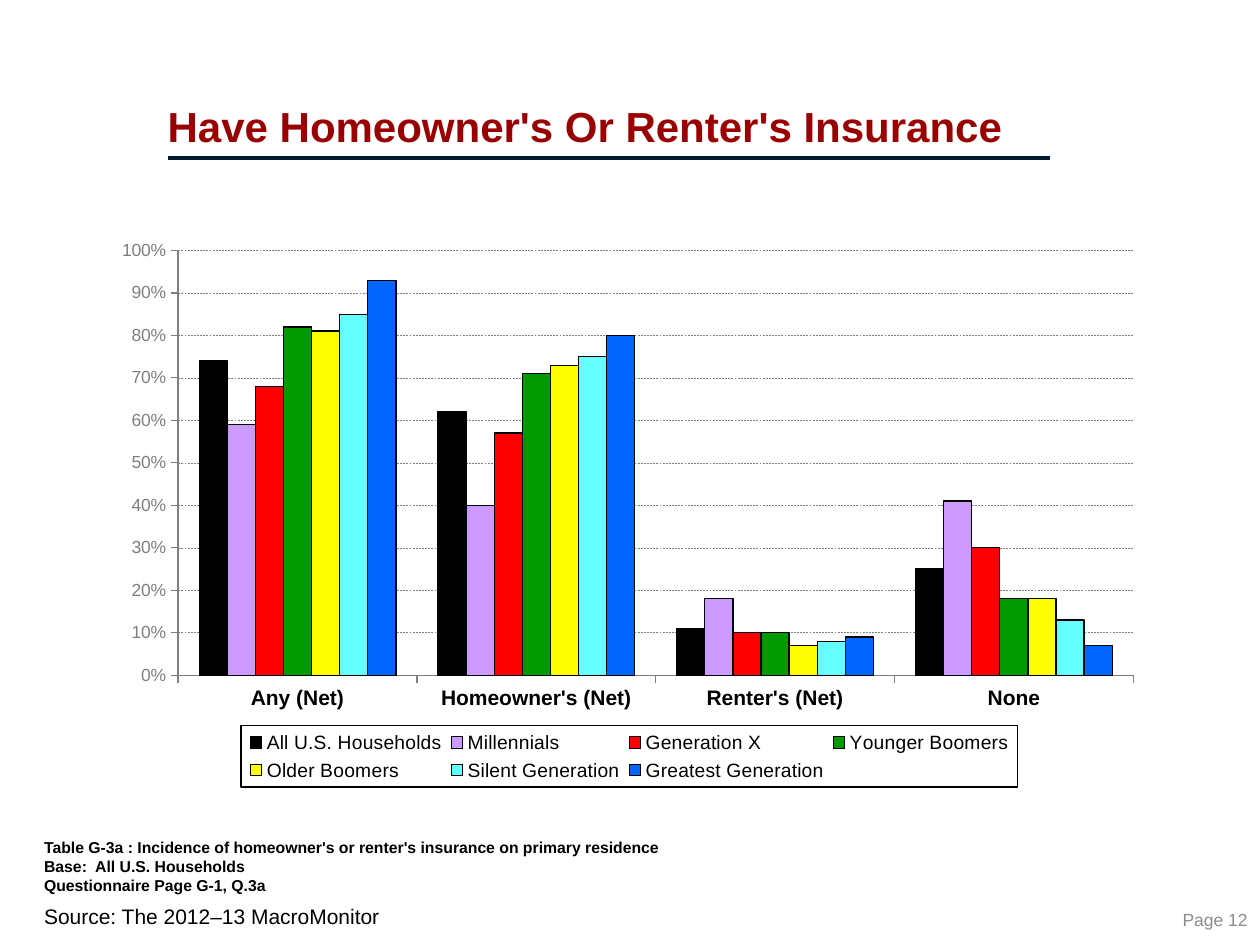
"""Build the slide on homeowner's and renter's insurance by generation."""
from lxml.etree import SubElement
from pptx import Presentation
from pptx.chart.data import CategoryChartData as Data
from pptx.dml.color import RGBColor
from pptx.enum.chart import XL_CHART_TYPE as Kind, XL_LEGEND_POSITION as Spot, XL_TICK_MARK as Tick
from pptx.enum.dml import MSO_LINE_DASH_STYLE as Dash
from pptx.enum.shapes import MSO_CONNECTOR as Link
from pptx.enum.text import MSO_ANCHOR as Anchor, PP_ALIGN as Align
from pptx.oxml import parse_xml
from pptx.oxml.ns import nsdecls, qn
from pptx.util import Cm, Pt


def style(font, size, hue, bold=False):
    font.name, font.size, font.bold = "Arial", Pt(size), bold
    font.color.rgb = RGBColor.from_string(hue)


def place(node, index, frame):
    for old in node.findall(qn("c:layout")):
        node.remove(old)
    box = parse_xml(f"<c:layout {nsdecls('c')}><c:manualLayout/></c:layout>")
    node.insert(index, box)
    if index == 0:
        SubElement(box[0], qn("c:layoutTarget")).set("val", "inner")
    for tag in ("xMode", "yMode"):
        SubElement(box[0], qn(f"c:{tag}")).set("val", "edge")
    for tag, part in zip("xywh", frame):
        SubElement(box[0], qn(f"c:{tag}")).set("val", str(part))


deck = Presentation()
deck.slide_width, deck.slide_height = Cm(25.4), Cm(19.05)
slide = deck.slides.add_slide(deck.slide_layouts[6])
shapes = slide.shapes

notes = ("Table G-3a : Incidence of homeowner's or renter's insurance on primary residence\v"
         "Base:  All U.S. Households\vQuestionnaire Page G-1, Q.3a")
texts = [
    ("Source: The 2012–13 MacroMonitor", (0.64, 18.08, 21.8, 0.76), (0.25, 0.13), 12, "000000", False, Anchor.TOP, Align.LEFT, True),
    ("Have Homeowner's Or Renter's Insurance", (3.38, 0.2, 18.2, 2.97), (0, 0.13), 24, "990000", True, Anchor.BOTTOM, Align.LEFT, True),
    ("Page 12", (23.52, 18.19, 1.88, 0.69), (0.25, 0.13), 10, "8C8C8C", False, Anchor.MIDDLE, Align.RIGHT, False),
    (notes, (0, 16.31, 17.83, 2.06), (0.89, 0.33), 9, "000000", True, Anchor.BOTTOM, Align.LEFT, False),
]
for words, area, inset, size, hue, bold, anchor, align, wrap in texts:
    frame = shapes.add_textbox(*map(Cm, area)).text_frame
    frame.text = words
    frame.word_wrap, frame.vertical_anchor = wrap, anchor
    frame.margin_left = frame.margin_right = Cm(inset[0])
    frame.margin_top = frame.margin_bottom = Cm(inset[1])
    para = frame.paragraphs[0]
    para.alignment = align
    if size == 24:
        para.line_spacing = 0.8
    for run in para.runs:
        style(run.font, size, hue, bold)

rule = shapes.add_connector(Link.STRAIGHT, Cm(3.38), Cm(3.18), Cm(21.16), Cm(3.18))
rule.line.color.rgb = RGBColor.from_string("00192F")
rule.line.width = Pt(2)
SubElement(rule.element.spPr, qn("a:effectLst"))

groups = [
    ("All U.S. Households", "000000", (0.74, 0.62, 0.11, 0.25)),
    ("Millennials", "CC99FF", (0.59, 0.4, 0.18, 0.41)),
    ("Generation X", "FF0000", (0.68, 0.57, 0.1, 0.3)),
    ("Younger Boomers", "009900", (0.82, 0.71, 0.1, 0.18)),
    ("Older Boomers", "FFFF00", (0.81, 0.73, 0.07, 0.18)),
    ("Silent Generation", "66FFFF", (0.85, 0.75, 0.08, 0.13)),
    ("Greatest Generation", "0066FF", (0.93, 0.8, 0.09, 0.07)),
]
data = Data(number_format="0%")
data.categories = ["Any (Net)", "Homeowner's (Net)", "Renter's (Net)", "None"]
for name, hue, vals in groups:
    data.add_series(name, vals)
area = map(Cm, (2.11, 4.6, 21.16, 11.28))
chart = shapes.add_chart(Kind.COLUMN_CLUSTERED, *area, data).chart
style(chart.font, 10, "000000")
chart.has_title = False

plot = chart.plots[0]
plot.vary_by_categories = False
plot.gap_width, plot.overlap = 150, 0
for bar, (name, hue, vals) in zip(plot.series, groups):
    bar.format.fill.solid()
    bar.format.fill.fore_color.rgb = RGBColor.from_string(hue)
    bar.format.line.color.rgb = RGBColor.from_string("000000")
    bar.format.line.width = Pt(0.75)
    bar.invert_if_negative = False

cats, scale = chart.category_axis, chart.value_axis
style(cats.tick_labels.font, 12, "000000", True)
style(scale.tick_labels.font, 10, "7F7F7F")
scale.minimum_scale, scale.maximum_scale, scale.major_unit = 0, 1, 0.1
scale.tick_labels.number_format = "0%"
scale.tick_labels.number_format_is_linked = False
scale.has_major_gridlines = True
grid = scale.major_gridlines.format.line
for line, width in ((cats.format.line, 0.75), (scale.format.line, 0.75), (grid, 0.25)):
    line.color.rgb = RGBColor.from_string("7F7F7F")
    line.width = Pt(width)
grid.dash_style = Dash.DASH
for axis in (cats, scale):
    axis.major_tick_mark, axis.minor_tick_mark = Tick.OUTSIDE, Tick.NONE

chart.has_legend = True
chart.legend.position = Spot.BOTTOM
chart.legend.include_in_layout = False
style(chart.legend.font, 11, "000000")
key = chart.element.xpath(".//c:legend")[0]
place(chart.element.xpath(".//c:plotArea")[0], 0, (0.07, 0.04, 0.91, 0.76))
place(key, 1, (0.13, 0.89, 0.74, 0.11))
key.find(qn("c:overlay")).addnext(parse_xml(
    f'<c:spPr {nsdecls("c", "a")}><a:ln w="9525"><a:solidFill>'
    '<a:srgbClr val="000000"/></a:solidFill></a:ln></c:spPr>'))

deck.save("out.pptx")
